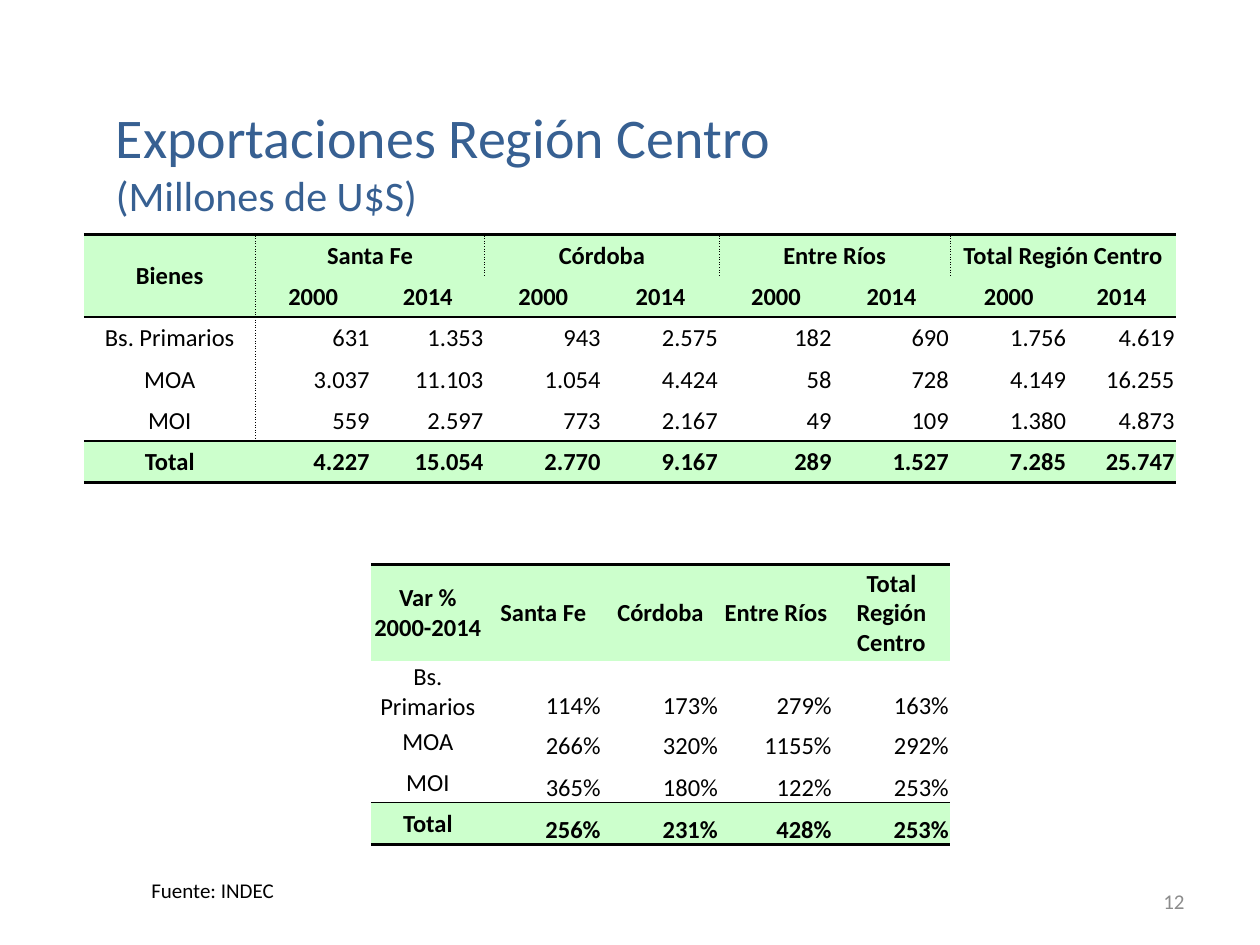
from lxml import etree
from pptx import Presentation
from pptx.dml.color import RGBColor
from pptx.enum.text import MSO_ANCHOR, MSO_AUTO_SIZE, PP_ALIGN
from pptx.oxml.ns import qn
from pptx.util import Pt

LEFT, CENTER, RIGHT = PP_ALIGN.LEFT, PP_ALIGN.CENTER, PP_ALIGN.RIGHT
TOP, MIDDLE, BOTTOM = MSO_ANCHOR.TOP, MSO_ANCHOR.MIDDLE, MSO_ANCHOR.BOTTOM
NO_AUTOFIT = MSO_AUTO_SIZE.NONE
TITLE_ONLY = 5

FONT = "Calibri"
BLACK, BLUE, GRAY, GREEN = "000000", "376092", "8C8C8C", "CCFFCC"

COLUMN_WIDTHS = [98, 66, 65, 67, 67, 65, 67, 67, 62]
ROW_HEIGHTS = [23.6] * 8 + [55, 31, 23, 23.6, 24]

EXPORTS = [
    ["Bienes", "Santa Fe", "", "Córdoba", "", "Entre Ríos", "", "Total Región Centro", ""],
    [""] + ["2000", "2014"] * 4,
    ["Bs. Primarios", "631", "1.353", "943", "2.575", "182", "690", "1.756", "4.619"],
    ["MOA", "3.037", "11.103", "1.054", "4.424", "58", "728", "4.149", "16.255"],
    ["MOI", "559", "2.597", "773", "2.167", "49", "109", "1.380", "4.873"],
    ["Total", "4.227", "15.054", "2.770", "9.167", "289", "1.527", "7.285", "25.747"],
]
VARIATION = [
    ["Var % 2000-2014", "Santa Fe", "Córdoba", "Entre Ríos", "Total Región Centro"],
    ["Bs. Primarios", "114%", "173%", "279%", "163%"],
    ["MOA", "266%", "320%", "1155%", "292%"],
    ["MOI", "365%", "180%", "122%", "253%"],
    ["Total", "256%", "231%", "428%", "253%"],
]
VARIATION_ROW, VARIATION_COLUMN = 8, 2
HEADER_ROWS = {0, 1, VARIATION_ROW}
TOTAL_ROWS = {5, 12}
RULE_WIDTHS = {0: 2, 2: 1, 5: 1, 6: 2, 8: 2, 12: 1, 13: 2}


def color(value):
    return RGBColor.from_string(value)


def format_paragraph(para, size, text_color, align=LEFT, bold=False):
    para.alignment = align
    para.font.name = FONT
    para.font.size = Pt(size)
    para.font.bold = bold
    para.font.color.rgb = color(text_color)


def place(shape, left, top, width, height):
    shape.left, shape.top = Pt(left), Pt(top)
    shape.width, shape.height = Pt(width), Pt(height)


def add_title(page, lines):
    title = page.shapes.title
    place(title, 59, 54.7, 521, 111.6)
    frame = title.text_frame
    frame.auto_size = NO_AUTOFIT
    frame.vertical_anchor = TOP
    frame.text = "\n".join(text for text, size in lines)
    for para, (text, size) in zip(frame.paragraphs, lines):
        format_paragraph(para, size, BLUE)


def add_label(page, text, bounds, text_color, align=LEFT, anchor=TOP):
    box = page.shapes.add_textbox(*map(Pt, bounds))
    frame = box.text_frame
    frame.word_wrap = True
    frame.vertical_anchor = anchor
    frame.text = text
    format_paragraph(frame.paragraphs[0], 12, text_color, align)


def in_variation(column):
    return VARIATION_COLUMN <= column < VARIATION_COLUMN + len(VARIATION[0])


def horizontal_rule(boundary, column):
    if boundary >= VARIATION_ROW and not in_variation(column):
        return 0
    return RULE_WIDTHS.get(boundary, 0)


def vertical_rule(row, boundary):
    if (boundary == 1 and row < 5) or (boundary in (3, 5, 7) and row == 0):
        return 0.5
    return 0


def add_border(cell, side, width):
    properties = cell._tc.get_or_add_tcPr()
    line = etree.SubElement(properties, qn(f"a:ln{side}"))
    if not width:
        etree.SubElement(line, qn("a:noFill"))
        return
    line.set("w", str(Pt(width)))
    fill = etree.SubElement(line, qn("a:solidFill"))
    etree.SubElement(fill, qn("a:srgbClr"), val=BLACK)
    dash = "sysDot" if side in "LR" else "solid"
    etree.SubElement(line, qn("a:prstDash"), val=dash)


def format_cell(cell, row, column, text):
    label_column = VARIATION_COLUMN if row >= VARIATION_ROW else 0
    is_header = row in HEADER_ROWS
    is_number = not is_header and column > label_column
    is_strong = is_header or row in TOTAL_ROWS

    cell.margin_left = cell.margin_right = cell.margin_top = Pt(0.75)
    cell.margin_bottom = 0
    cell.vertical_anchor = BOTTOM if is_number and row > VARIATION_ROW else MIDDLE
    cell.text = text
    align = RIGHT if is_number else CENTER
    format_paragraph(cell.text_frame.paragraphs[0], 14, BLACK, align, is_strong)

    add_border(cell, "L", vertical_rule(row, column))
    add_border(cell, "R", vertical_rule(row, column + cell.span_width))
    add_border(cell, "T", horizontal_rule(row, column))
    add_border(cell, "B", horizontal_rule(row + cell.span_height, column))
    if is_strong and (row < VARIATION_ROW or in_variation(column)):
        cell.fill.solid()
        cell.fill.fore_color.rgb = color(GREEN)
    else:
        cell.fill.background()


def cell_text(row, column):
    if row < len(EXPORTS):
        return EXPORTS[row][column]
    if row >= VARIATION_ROW and in_variation(column):
        return VARIATION[row - VARIATION_ROW][column - VARIATION_COLUMN]
    return ""


def add_exports_table(page):
    frame = page.shapes.add_table(
        len(ROW_HEIGHTS), len(COLUMN_WIDTHS), Pt(48), Pt(134),
        Pt(sum(COLUMN_WIDTHS)), Pt(sum(ROW_HEIGHTS)))
    table = frame.table
    table.first_row = table.horz_banding = False
    for column, width in zip(table.columns, COLUMN_WIDTHS):
        column.width = Pt(width)
    for row, height in zip(table.rows, ROW_HEIGHTS):
        row.height = Pt(height)
    table.cell(0, 0).merge(table.cell(1, 0))
    for column in range(1, len(COLUMN_WIDTHS), 2):
        table.cell(0, column).merge(table.cell(0, column + 1))
    for row in range(len(ROW_HEIGHTS)):
        for column in range(len(COLUMN_WIDTHS)):
            format_cell(table.cell(row, column), row, column, cell_text(row, column))


def main():
    deck = Presentation()
    deck.slide_width, deck.slide_height = Pt(720), Pt(540)
    page = deck.slides.add_slide(deck.slide_layouts[TITLE_ONLY])
    add_label(page, "12", (516, 500.5, 168, 28.8), GRAY, RIGHT, MIDDLE)
    add_title(page, [("Exportaciones Región Centro", 32), ("(Millones de U$S)", 24)])
    add_label(page, "Fuente: INDEC", (79.4, 497.8, 439, 21.8), BLACK)
    add_exports_table(page)
    deck.save("out.pptx")


if __name__ == "__main__":
    main()
